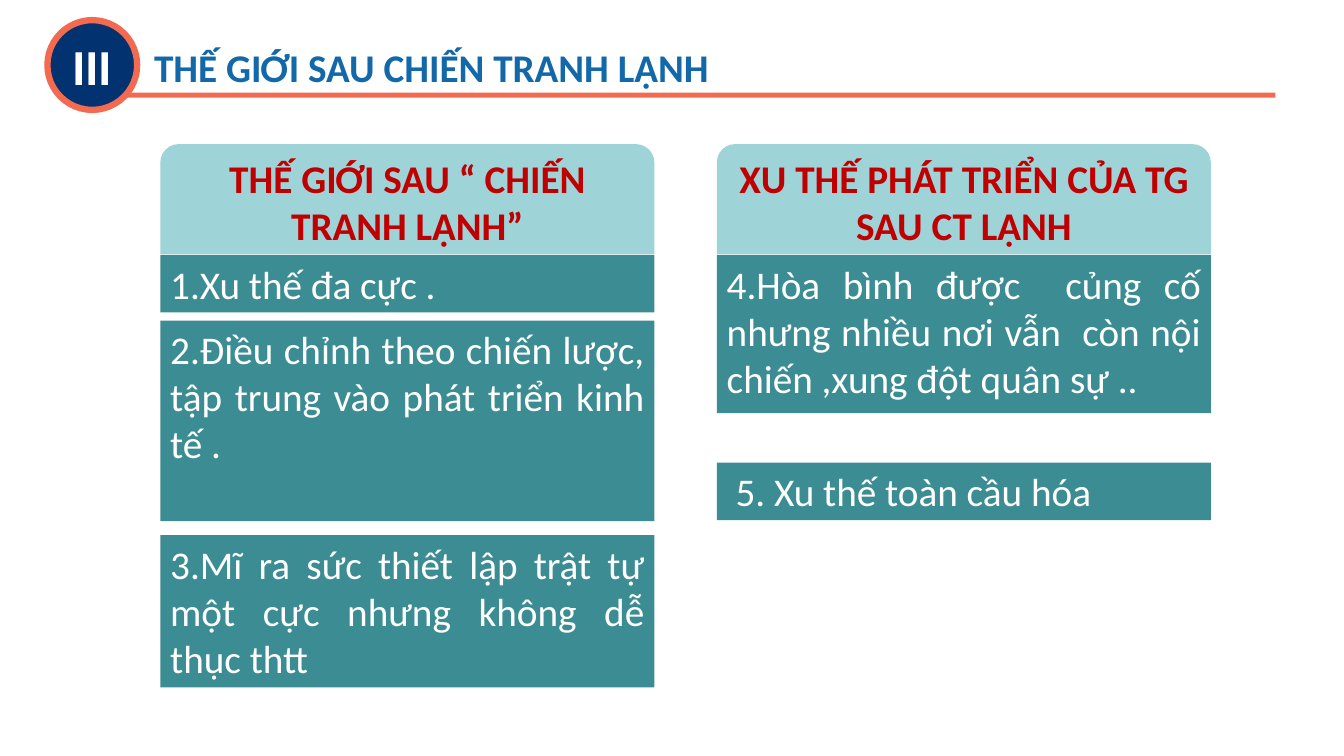
from pptx import Presentation
from pptx.dml.color import RGBColor
from pptx.enum.shapes import MSO_SHAPE as SHAPE
from pptx.enum.text import MSO_ANCHOR as ANCHOR, PP_ALIGN as ALIGN
from pptx.util import Inches, Pt

CARD_W = 4.9
HEADER_H = 1.09
LEFT_CARDS = [
    (1.1, 0.57, "1.Xu thế đa cực ."),
    (1.75, 1.99, "2.Điều chỉnh theo chiến lược, tập trung vào phát triển kinh tế ."),
    (3.88, 1.51, "3.Mĩ ra sức thiết lập trật tự một cực nhưng không dễ thục thtt"),
]
RIGHT_CARDS = [
    (1.1, 1.57, "4.Hòa bình được  củng cố nhưng nhiều nơi vẫn  còn nội chiến ,xung đột quân sự .."),
    (3.16, 0.57, " 5. Xu thế toàn cầu hóa"),
]


def rgb(value):
    """Return the colour for a hex string."""
    return RGBColor.from_string(value)


def write(sp, text, color, align, size=28, bold=False, anchor=ANCHOR.TOP, wrap=True):
    """Put one formatted paragraph into a shape."""
    tf = sp.text_frame
    tf.word_wrap = wrap
    tf.vertical_anchor = anchor
    p = tf.paragraphs[0]
    p.text = text
    p.alignment = align
    p.font.name = "Calibri"
    p.font.size = Pt(size)
    p.font.bold = bold
    p.font.color.rgb = rgb(color)


def add_block(s, kind, x, y, w, h, fill):
    """Add a flat filled shape without an outline."""
    sp = s.shapes.add_shape(kind, Inches(x), Inches(y), Inches(w), Inches(h))
    sp.shadow.inherit = False
    sp.fill.solid()
    sp.fill.fore_color.rgb = rgb(fill)
    sp.line.fill.background()
    return sp


def add_title(s, x, y, w):
    """Add the numbered badge, the title and the rule under it."""
    title = s.shapes.add_textbox(Inches(x + 0.96), Inches(y + 0.18), Inches(w - 0.87), Inches(0.57))
    write(title, "THẾ GIỚI SAU CHIẾN TRANH LẠNH", "1368AA", ALIGN.LEFT, bold=True)
    add_block(s, SHAPE.RECTANGLE, x + 0.76, y + 0.72, w - 0.76, 0.05, "F26A4F")
    badge = add_block(s, SHAPE.OVAL, x, y, 0.89, 0.89, "033270")
    badge.line.color.rgb = rgb("F26A4F")
    badge.line.width = Pt(4.5)
    write(badge, "III", "FFFFFF", ALIGN.CENTER, 36, True, ANCHOR.MIDDLE, False)


def add_column(s, x, y, heading, cards):
    """Add a rounded heading with its cards below."""
    header = add_block(s, SHAPE.ROUND_2_SAME_RECTANGLE, x, y, CARD_W, HEADER_H, "9ED3D7")
    write(header, heading, "C00000", ALIGN.CENTER, bold=True)
    for offset, h, text in cards:
        card = add_block(s, SHAPE.RECTANGLE, x, y + offset, CARD_W, h, "3C8C93")
        write(card, text, "FFFFFF", ALIGN.JUSTIFY)


def main():
    """Build the slide and save it."""
    prs = Presentation()
    prs.slide_width, prs.slide_height = Inches(13.33), Inches(7.5)
    s = prs.slides.add_slide(prs.slide_layouts[6])
    add_title(s, 0.47, 0.2, 12.18)
    add_column(s, 1.59, 1.43, "THẾ GIỚI SAU “ CHIẾN TRANH LẠNH”", LEFT_CARDS)
    add_column(s, 7.11, 1.43, "XU THẾ PHÁT TRIỂN CỦA TG SAU CT LẠNH", RIGHT_CARDS)
    prs.save("out.pptx")


if __name__ == "__main__":
    main()
